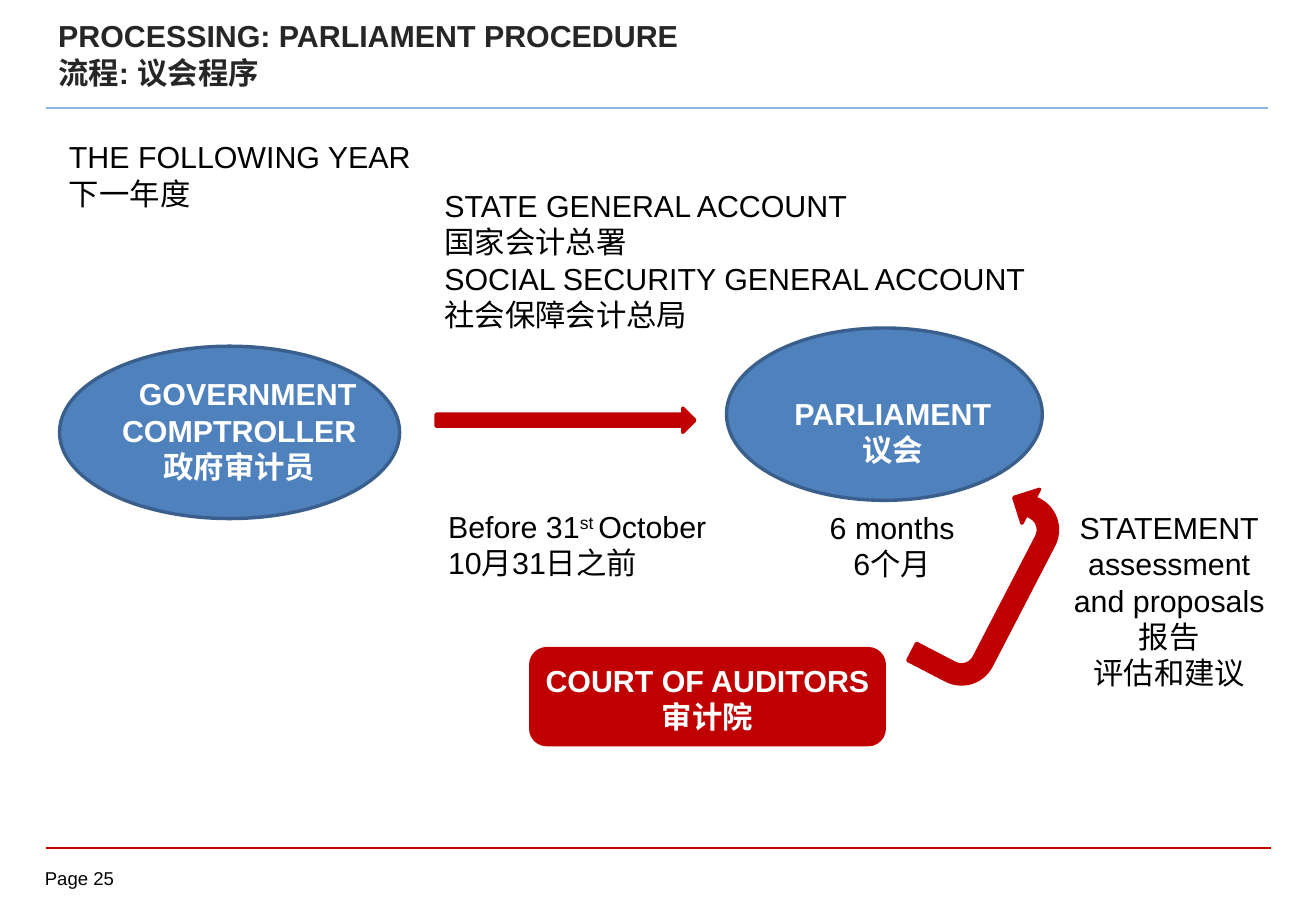
from dataclasses import dataclass

from lxml import etree
from pptx import Presentation, util as u
from pptx.dml.color import RGBColor
from pptx.enum import shapes, text
from pptx.oxml.ns import qn


@dataclass(frozen=True)
class Theme:
    font: str = "Arial"
    body: float = 18
    small: float = 11
    ink: str = "000000"
    title: str = "262626"
    white: str = "FFFFFF"
    red: str = "C00000"
    blue: str = "4F81BD"
    blue_edge: str = "3A5F8C"
    rule: str = "8EB4E3"
    edge: float = 2


@dataclass(frozen=True)
class Box:
    left: float
    top: float
    width: float
    height: float

    def inside(self, left, top, width, height):
        return Box(self.left + left, self.top + top, width, height)

    def lengths(self):
        return [u.Pt(value) for value in (self.left, self.top, self.width, self.height)]


THEME = Theme()
CENTER = text.PP_ALIGN.CENTER
LEFT = text.PP_ALIGN.LEFT
SHAPE = shapes.MSO_SHAPE


def add_rule(page, box, color, weight):
    """Draw a horizontal line along the top of the box."""
    left, top, width, _ = box.lengths()
    line = page.shapes.add_connector(
        shapes.MSO_CONNECTOR.STRAIGHT, left, top, left + width, top)
    line.line.color.rgb = RGBColor.from_string(color)
    line.line.width = u.Pt(weight)
    etree.SubElement(line._element.spPr, qn("a:effectLst"))


def add_label(page, box, lines, align=LEFT, color=THEME.ink, bold=False,
              size=THEME.body, anchor=text.MSO_ANCHOR.TOP, margins=(7.2, 3.6)):
    """Write one paragraph a line; text between ^ marks is superscript."""
    frame = page.shapes.add_textbox(*box.lengths()).text_frame
    across, down = (u.Pt(margin) for margin in margins)
    layout = {"word_wrap": True, "vertical_anchor": anchor,
              "margin_left": across, "margin_right": across,
              "margin_top": down, "margin_bottom": down}
    for name, value in layout.items():
        setattr(frame, name, value)
    style = {"name": THEME.font, "size": u.Pt(size), "bold": bold}
    for index, line in enumerate(lines):
        para = frame.add_paragraph() if index else frame.paragraphs[0]
        para.alignment = align
        for part, words in enumerate(line.split("^")):
            span = para.add_run()
            span.text = words
            for name, value in style.items():
                setattr(span.font, name, value)
            span.font.color.rgb = RGBColor.from_string(color)
            if part % 2:
                span._r.get_or_add_rPr().set("baseline", "30000")
    return frame


def add_figure(page, kind, box, fill, edge):
    figure = page.shapes.add_shape(kind, *box.lengths())
    figure.shadow.inherit = False
    figure.fill.solid()
    figure.fill.fore_color.rgb = RGBColor.from_string(fill)
    figure.line.color.rgb = RGBColor.from_string(edge)
    figure.line.width = u.Pt(THEME.edge)
    return figure


def add_header(page, box):
    add_label(page, box.inside(0, 0, box.width, 51),
              ["PROCESSING: PARLIAMENT PROCEDURE", "流程: 议会程序"],
              color=THEME.title, bold=True, anchor=text.MSO_ANCHOR.MIDDLE)
    add_rule(page, box.inside(0, box.height, box.width, 0), THEME.rule, 1.5)


def add_footer(page, box):
    add_rule(page, box, THEME.red, 1)
    add_label(page, box.inside(-0.8, 11.5, 52.6, 15.8), ["Page 25"],
              size=THEME.small, margins=(0, 0))


def add_institutions(page, box):
    blue = (THEME.blue, THEME.blue_edge)
    red = (THEME.red, THEME.red)
    institutions = [
        (SHAPE.OVAL, (5.3, 133.2, 201.6, 102.2), blue, (26.9, 146.9, 169.9, 72.7),
         ["GOVERNMENT", "COMPTROLLER", "政府审计员"]),
        (SHAPE.OVAL, (400.6, 122.4, 187.2, 102.2), blue, (417.1, 158.4, 164.2, 51.1),
         ["PARLIAMENT", "议会"]),
        (SHAPE.ROUNDED_RECTANGLE, (284.6, 312.5, 209.5, 56.9), red,
         (284.6, 316.8, 209.5, 51.1), ["COURT OF AUDITORS", "审计院"]),
    ]
    for kind, place, colors, label_place, lines in institutions:
        add_figure(page, kind, box.inside(*place), *colors)
        frame = add_label(page, box.inside(*label_place), lines, CENTER,
                          THEME.white, bold=True)
        if lines[0] == "GOVERNMENT":
            indent = frame.paragraphs[0]._p.get_or_add_pPr()
            indent.set("marL", str(u.Pt(10)))
            indent.set("indent", "0")


def add_flows(page, box):
    add_figure(page, SHAPE.RIGHT_ARROW, box.inside(228.5, 169.9, 153.4, 14.4),
               THEME.red, THEME.red)
    statement = add_figure(page, SHAPE.U_TURN_ARROW,
                           box.inside(494.2, 251.3, 126, 45.4), THEME.red, THEME.red)
    statement.rotation = 297.4
    statement._element.spPr.xfrm.set("flipV", "1")


def add_notes_on_timing(page, box):
    notes = [
        ((3.8, 6.5, 249.8, 51.1), LEFT, ["THE FOLLOWING YEAR", "下一年度"]),
        ((226.3, 35.3, 360.7, 94.3), LEFT,
         ["STATE GENERAL ACCOUNT", "国家会计总署",
          "SOCIAL SECURITY GENERAL ACCOUNT", "社会保障会计总局"]),
        ((228.5, 225.4, 193, 51.1), LEFT,
         ["Before 31^st ^October", "10月31日之前"]),
        ((439.4, 226.1, 118.8, 51.1), CENTER, ["6 months", "6个月"]),
        ((592.8, 226.1, 140.4, 116.6), CENTER,
         ["STATEMENT", "assessment and proposals", "报告", "评估和建议"]),
    ]
    for place, align, lines in notes:
        add_label(page, box.inside(*place), lines, align)


def main():
    deck = Presentation()
    deck.slide_width, deck.slide_height = u.Pt(780), u.Pt(540)
    page = deck.slides.add_slide(deck.slide_layouts[6])
    diagram = Box(30, 72, 725, 420)
    add_header(page, Box(27.4, 6.5, 724.3, 57.6))
    add_institutions(page, diagram)
    add_flows(page, diagram)
    add_notes_on_timing(page, diagram)
    add_footer(page, Box(27.4, 502.6, 725.7, 30))
    deck.save("out.pptx")


if __name__ == "__main__":
    main()
